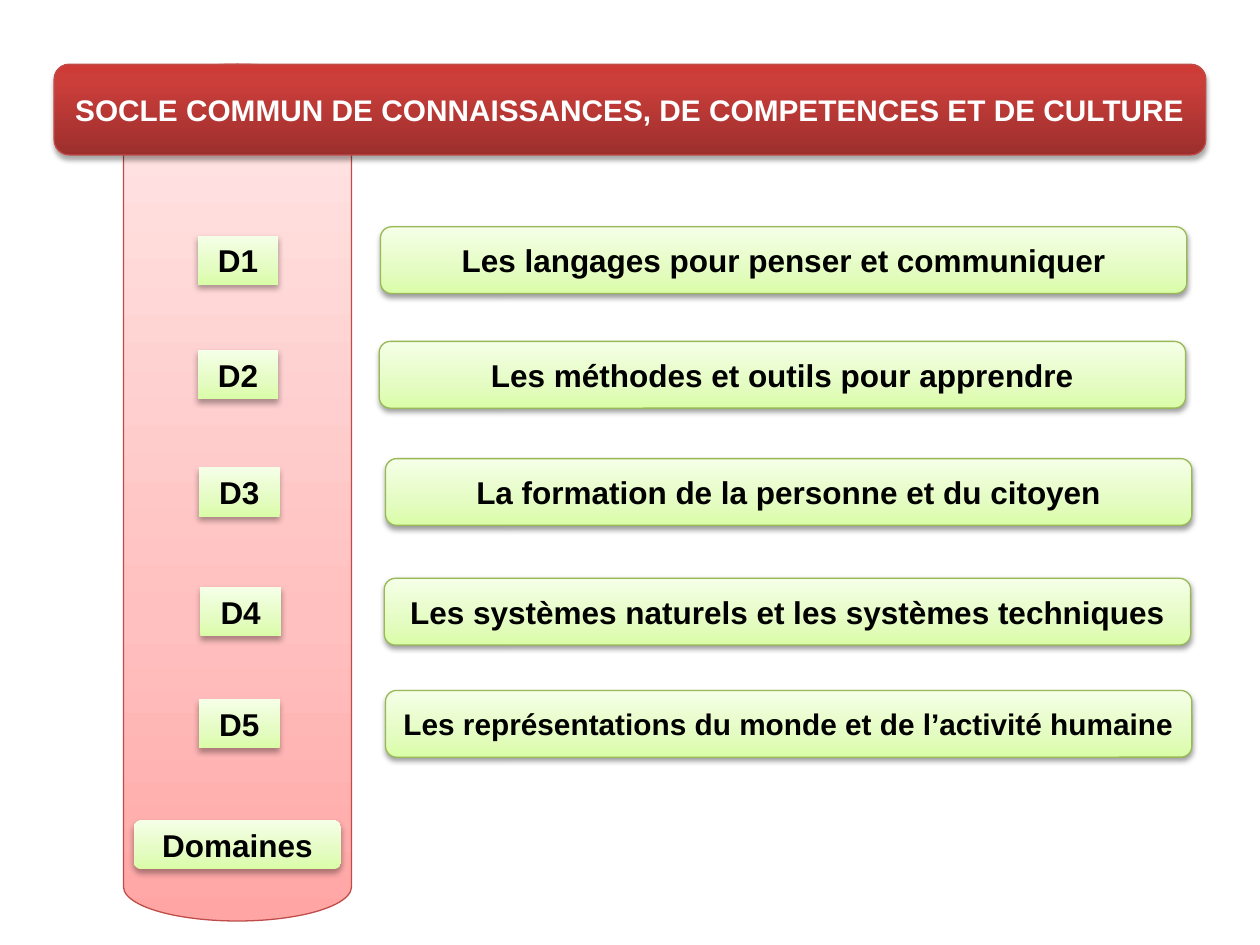
from copy import deepcopy

from lxml import etree
from pptx import Presentation, util as u
from pptx.dml.color import RGBColor
from pptx.enum import shapes, text
from pptx.oxml.ns import qn

GREEN = ((0, "DAFDA7"), (0.35, "E4FCC2"), (1, "F5FFE7"))
PINK = ((0, "FFA6A5"), (0.35, "FFC0BF"), (1, "FFE7E7"))
RED = ((0, "9C2F2D"), (0.8, "CB3E3A"), (1, "CE3B37"))
RED_EDGE, GREEN_EDGE = "BF4C48", "98B955"
# opacity in percent, blur and distance in points
TAG_SHADOW, BAR_SHADOW, BANNER_SHADOW = (32, 3.5, 2.2), (38, 3.1, 1.6), (35, 3.1, 1.8)

# label, wording, text size, top row, tag column, bar column
DOMAINS = (
    ("D1", "Les langages pour penser et communiquer", 18, 18, 15.7, 30.2),
    ("D2", "Les méthodes et outils pour apprendre", 18, 27.1, 15.7, 30.1),
    ("D3", "La formation de la personne et du citoyen", 18, 36.4, 15.8, 30.6),
    ("D4", "Les systèmes naturels et les systèmes techniques", 18, 45.9, 15.9, 30.5),
    ("D5", "Les représentations du monde et de l’activité humaine", 17, 54.8, 15.8, 30.6),
)
BAR_HEIGHT, TAG_HEIGHT = 5.3, 3.9
TAG_DROP = (BAR_HEIGHT - TAG_HEIGHT) / 2


def rgb(color):
    return RGBColor.from_string(color)


class Poster:
    """Draws on a grid of 100 columns by 75 rows."""

    font = "Arial"

    def __init__(self, deck):
        self.slide = deck.slides.add_slide(deck.slide_layouts[6])
        self.column = deck.slide_width / 100
        self.row = deck.slide_height / 75

    def block(self, preset, place, stops, edge=None, shadow=None):
        left, top, width, height = place
        block = self.slide.shapes.add_shape(
            preset, round(left * self.column), round(top * self.row),
            round(width * self.column), round(height * self.row))
        self.blend(block.fill, stops)
        if edge:
            block.line.color.rgb = rgb(edge)
            block.line.width = u.Pt(0.75)
        else:
            block.line.fill.background()
        block.shadow.inherit = False
        if shadow:
            self.cast_shadow(block, *shadow)
        return block

    def blend(self, fill, stops):
        """Fill from bottom to top through all the stops."""
        fill.gradient()
        fill.gradient_angle = 90
        first = fill.gradient_stops[0]._gs
        first.addnext(deepcopy(first))
        for stop, (position, color) in zip(fill.gradient_stops, stops):
            stop.position = position
            stop.color.rgb = rgb(color)

    def cast_shadow(self, block, opacity, blur, distance):
        effects = block._element.spPr.find(qn("a:effectLst"))
        outer = etree.SubElement(
            effects, qn("a:outerShdw"), blurRad=str(u.Pt(blur)),
            dist=str(u.Pt(distance)), dir="5400000", rotWithShape="0")
        black = etree.SubElement(outer, qn("a:srgbClr"), val="000000")
        etree.SubElement(black, qn("a:alpha"), val=str(opacity * 1000))

    def caption(self, block, wording, size=18, color="000000"):
        frame = block.text_frame
        frame.word_wrap = False
        frame.vertical_anchor = text.MSO_ANCHOR.MIDDLE
        line = frame.paragraphs[0]
        line.text = wording
        line.alignment = text.PP_ALIGN.CENTER
        line.font.name, line.font.size, line.font.bold = self.font, u.Pt(size), True
        line.font.color.rgb = rgb(color)

    def column_shaft(self, place):
        shaft = self.block(shapes.MSO_SHAPE.CAN, place, PINK, RED_EDGE)
        shaft.adjustments[0] = 0.3

    def tag(self, wording, place, preset=shapes.MSO_SHAPE.RECTANGLE):
        self.caption(self.block(preset, place, GREEN, shadow=TAG_SHADOW), wording)

    def bar(self, wording, place, size):
        bar = self.block(shapes.MSO_SHAPE.ROUNDED_RECTANGLE, place,
                         GREEN, GREEN_EDGE, BAR_SHADOW)
        self.caption(bar, wording, size)

    def banner(self, wording, place):
        banner = self.block(shapes.MSO_SHAPE.ROUNDED_RECTANGLE, place,
                            RED, RED_EDGE, BANNER_SHADOW)
        self.caption(banner, wording, 17, "FFFFFF")


def main():
    deck = Presentation()
    deck.slide_width, deck.slide_height = u.Inches(10), u.Inches(7.5)
    poster = Poster(deck)
    poster.column_shaft((9.8, 5.1, 18.1, 68))
    for label, wording, size, top, tag_left, bar_left in DOMAINS:
        poster.tag(label, (tag_left, top + TAG_DROP, 6.4, TAG_HEIGHT))
        poster.bar(wording, (bar_left, top, 64, BAR_HEIGHT), size)
    poster.tag("Domaines", (10.6, 65.1, 16.5, TAG_HEIGHT),
               shapes.MSO_SHAPE.ROUNDED_RECTANGLE)
    poster.banner("SOCLE COMMUN DE CONNAISSANCES, DE COMPETENCES ET DE CULTURE",
                  (4.3, 5.1, 91.4, 7.2))
    deck.save("out.pptx")


if __name__ == "__main__":
    main()
